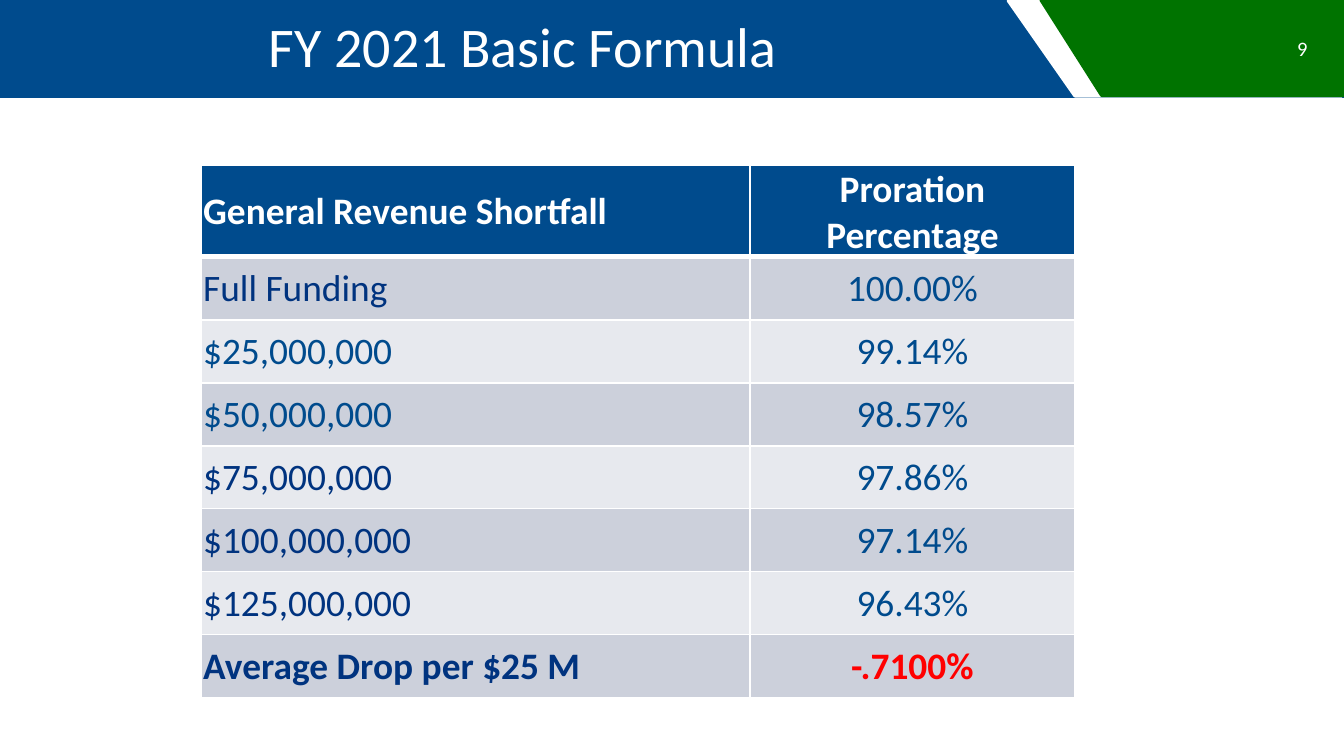
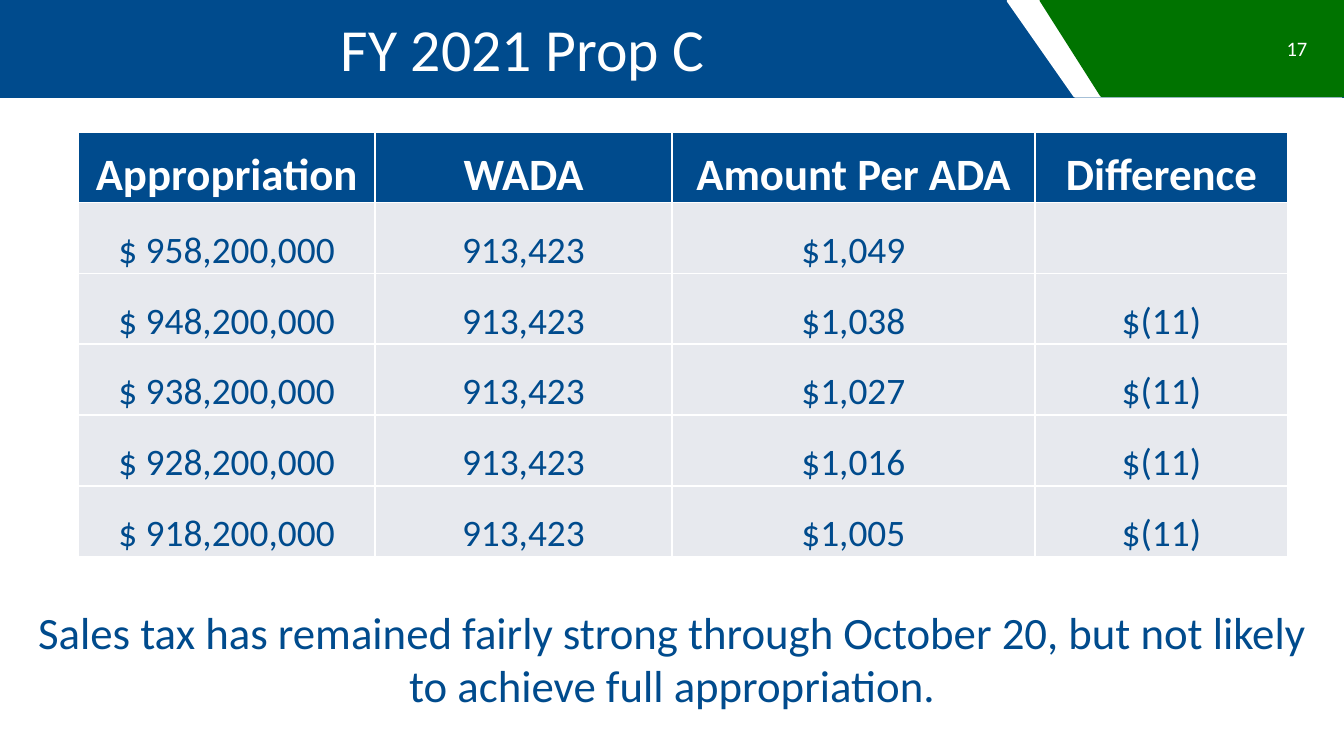
from dataclasses import dataclass

from lxml.etree import SubElement
from pptx import Presentation
from pptx.dml.color import RGBColor
from pptx.enum.shapes import MSO_SHAPE
from pptx.enum.text import MSO_ANCHOR, PP_ALIGN
from pptx.oxml.ns import qn
from pptx.util import Cm, Pt

COLOURS = {
    "blue": "004B8D",
    "navy": "00337F",
    "green": "007300",
    "red": "FF0000",
    "white": "FFFFFF",
    "band": "CCD0DB",
    "pale": "E7E9EE",
}
FONT = "Calibri"


@dataclass
class Box:
    """A region of the slide, in centimetres."""
    left: float
    top: float
    width: float
    height: float

    def inner(self, left, top, width, height):
        return Box(self.left + left, self.top + top, width, height)

    def lengths(self):
        return Cm(self.left), Cm(self.top), Cm(self.width), Cm(self.height)


def colour(name):
    return RGBColor.from_string(COLOURS[name])


def write_text(frame, text, size=20, ink="blue", bold=False, align=PP_ALIGN.CENTER):
    paragraph = frame.paragraphs[0]
    paragraph.alignment = align
    run = paragraph.add_run()
    run.text = text
    run.font.name = FONT
    run.font.size = Pt(size)
    run.font.bold = bold
    run.font.color.rgb = colour(ink)


def add_label(slide, box, text, anchor=MSO_ANCHOR.TOP, indent=0, **text_format):
    frame = slide.shapes.add_textbox(*box.lengths()).text_frame
    frame.word_wrap = True
    frame.vertical_anchor = anchor
    frame.margin_left += Cm(indent)
    write_text(frame, text, **text_format)


def add_block(slide, kind, box, fill, outlined=False):
    block = slide.shapes.add_shape(kind, *box.lengths())
    block.shadow.inherit = False
    block.fill.solid()
    block.fill.fore_color.rgb = colour(fill)
    if outlined:
        block.line.color.rgb = colour(fill)
        block.line.width = Pt(2)
    else:
        block.line.fill.background()
    return block


def add_slanted_end(slide, box, fill):
    """Lay a manual-input shape on its side so that it covers the box."""
    shift = (box.width - box.height) / 2
    upright = box.inner(shift, -shift, box.height, box.width)
    add_block(slide, MSO_SHAPE.FLOWCHART_MANUAL_INPUT, upright, fill, outlined=True).rotation = 270


def add_header(slide, box, title, title_size, page):
    # Blue band with a white gap and a green end
    add_block(slide, MSO_SHAPE.RECTANGLE, box, "blue")
    add_slanted_end(slide, box.inner(19.06, 0.01, 6.3, 1.8), "white")
    add_slanted_end(slide, box.inner(19.68, 0, 5.72, 1.8), "green")
    # Page number and title
    add_label(slide, box.inner(22.86, 0.53, 2.1, 0.76), page, anchor=MSO_ANCHOR.MIDDLE,
              size=11, ink="white", align=PP_ALIGN.RIGHT)
    add_label(slide, box.inner(0.84, 0.1, 17.78, 1.65), title, indent=0.3,
              size=title_size, ink="white")


def draw_borders(cell, top=1, bottom=1):
    properties = cell._tc.get_or_add_tcPr()
    for side, width in (("L", 1), ("R", 1), ("T", top), ("B", bottom)):
        edge = SubElement(properties, qn(f"a:ln{side}"), w=str(Pt(width)))
        fill = SubElement(edge, qn("a:solidFill"))
        SubElement(fill, qn("a:srgbClr"), val=COLOURS["white"])


def add_grid(slide, box, widths, row_height, rows, fills, anchor, header_rule=1):
    """Place a table; each cell is a (text, format) pair, fills alternate by row."""
    grid_frame = slide.shapes.add_table(len(rows), len(widths), *box.lengths())
    grid = grid_frame.table
    grid.horz_banding = False
    for column, width in zip(grid.columns, widths):
        column.width = Cm(width)
    for r, row in enumerate(rows):
        grid.rows[r].height = Cm(row_height)
        for c, (text, text_format) in enumerate(row):
            cell = grid.cell(r, c)
            draw_borders(cell, top=header_rule if r == 1 else 1,
                         bottom=header_rule if r == 0 else 1)
            cell.fill.solid()
            cell.fill.fore_color.rgb = colour("blue" if r == 0 else fills[(r - 1) % len(fills)])
            cell.vertical_anchor = anchor
            cell.margin_left = cell.margin_right = cell.margin_top = Cm(0.03)
            cell.margin_bottom = 0
            if text:
                write_text(cell.text_frame, text, **text_format)
    grid_frame.height = Cm(box.height)


def add_formula_table(slide, box):
    headings = {"ink": "white", "bold": True}
    shortfalls = [
        ("Full Funding", "navy", "100.00%"),
        ("$25,000,000", "blue", "99.14%"),
        ("$50,000,000", "blue", "98.57%"),
        ("$75,000,000", "navy", "97.86%"),
        ("$100,000,000", "navy", "97.14%"),
        ("$125,000,000", "navy", "96.43%"),
    ]
    left = {"align": PP_ALIGN.LEFT}
    rows = [[("General Revenue Shortfall", headings | left), ("Proration Percentage", headings)]]
    rows += [[(amount, left | {"ink": ink}), (share, {})] for amount, ink, share in shortfalls]
    rows.append([("Average Drop per $25 M", left | {"ink": "navy", "bold": True}),
                 ("-.7100%", {"ink": "red", "bold": True})])
    add_grid(slide, box, [10.36, 6.15], 1.19, rows, ["band", "pale"],
             MSO_ANCHOR.MIDDLE, header_rule=3)


def add_prop_c_table(slide, box):
    headings = ["Appropriation", "WADA", "Amount Per ADA", "Difference"]
    appropriations = [
        ("$ 958,200,000", "913,423", "$1,049", ""),
        ("$ 948,200,000", "913,423", "$1,038", "$(11)"),
        ("$ 938,200,000", "913,423", "$1,027", "$(11)"),
        ("$ 928,200,000", "913,423", "$1,016", "$(11)"),
        ("$ 918,200,000", "913,423", "$1,005", "$(11)"),
    ]
    rows = [[(heading, {"size": 24, "ink": "white", "bold": True}) for heading in headings]]
    rows += [[(value, {}) for value in values] for values in appropriations]
    add_grid(slide, box, [5.61, 5.61, 6.86, 4.78], box.height / len(rows), rows, ["pale"],
             MSO_ANCHOR.BOTTOM)


def main():
    deck = Presentation()
    deck.slide_width, deck.slide_height = Cm(25.4), Cm(14.29)
    blank = deck.slide_layouts[6]
    header = Box(0, 0, 25.4, 1.85)

    # Basic formula
    formula = deck.slides.add_slide(blank)
    add_header(formula, header, "FY 2021 Basic Formula", 30, "9")
    add_formula_table(formula, Box(3.81, 3.13, 16.51, 10.06))

    # Prop C
    prop_c = deck.slides.add_slide(blank)
    add_header(prop_c, header, "FY 2021 Prop C", 32, "17")
    add_prop_c_table(prop_c, Box(1.48, 2.49, 22.86, 8.04))
    add_label(prop_c, Box(0.42, 11.3, 24.56, 2.3),
              "Sales tax has remained fairly strong through October 20, but not likely "
              "to achieve full appropriation.", size=24)

    deck.save("out.pptx")


if __name__ == "__main__":
    main()
